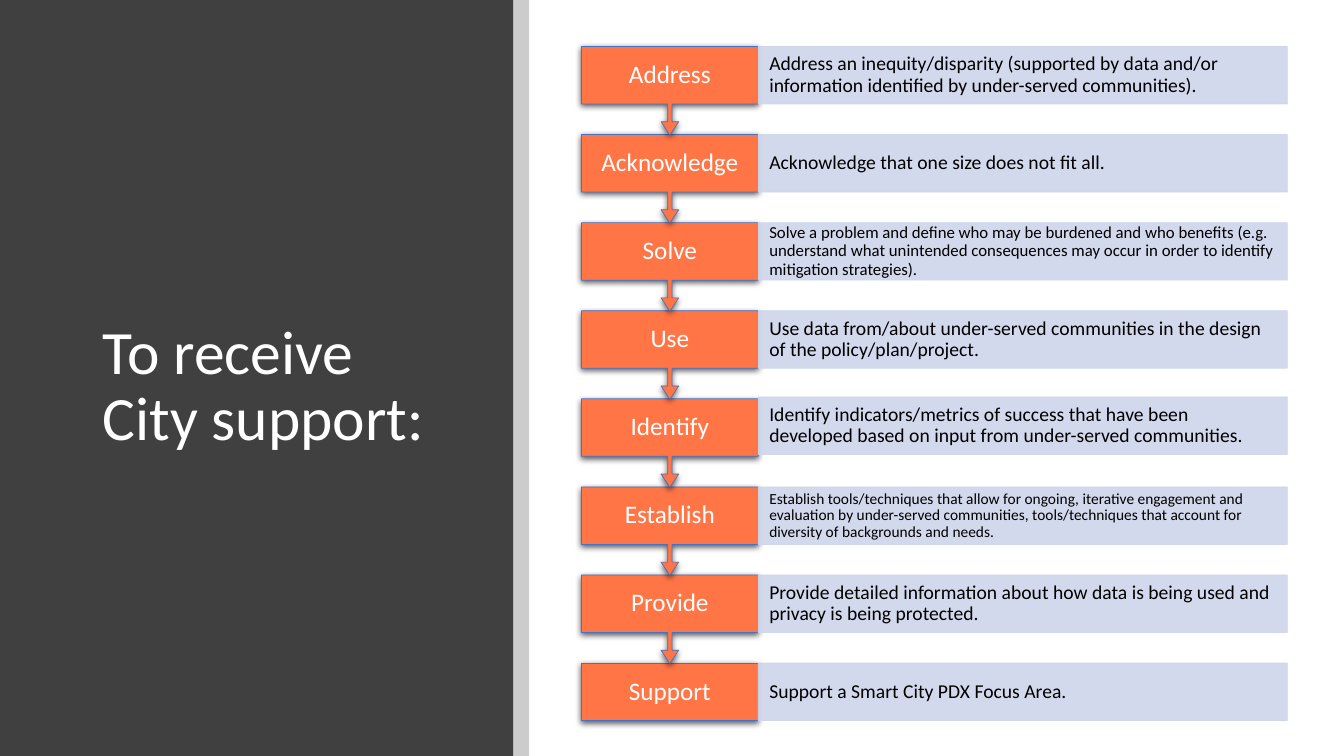
from lxml import etree
from pptx import Presentation, util as u
from pptx.dml.color import RGBColor
from pptx.enum import shapes, text
from pptx.oxml import ns

COLORS = {
    "panel": "404040",
    "strip": "000000",
    "step": "FF7546",
    "outline": "4472C4",
    "detail": "CFD5EA",
    "light": "FFFFFF",
    "dark": "000000",
}
BOX = shapes.MSO_SHAPE.RECTANGLE
ARROW_BOX = shapes.MSO_SHAPE.UP_ARROW_CALLOUT

STEP_LEFT, STEP_WIDTH = 415.4, 126.2
DETAIL_LEFT, DETAIL_WIDTH = STEP_LEFT + STEP_WIDTH, 378
FIRST_TOP, PITCH, ROW_HEIGHT, ARROW_HEIGHT = 33.2, 62.92, 41.1, 63.2

STEPS = [
    ("Address", "Address an inequity/disparity (supported by data and/or information identified by under-served communities).", 14, 0),
    ("Acknowledge", "Acknowledge that one size does not fit all.", 14, 0),
    ("Solve", "Solve a problem and define who may be burdened and who benefits (e.g. understand what unintended consequences may occur in order to identify mitigation strategies).", 12, 0),
    ("Use", "Use data from/about under-served communities in the design of the policy/plan/project.", 14, 0),
    ("Identify", "Identify indicators/metrics of success that have been developed based on input from under-served communities.", 14, -1.3),
    ("Establish", "Establish tools/techniques that allow for ongoing, iterative engagement and evaluation by under-served communities, tools/techniques that account for diversity of backgrounds and needs.", 11, 0),
    ("Provide", "Provide detailed information about how data is being used and privacy is being protected.", 14, 0),
    ("Support", "Support a Smart City PDX Focus Area.", 14, 0),
]


class Deck:
    def __init__(self):
        self.font = "Calibri"
        self.prs = Presentation()
        self.prs.slide_width, self.prs.slide_height = u.Pt(960), u.Pt(540)
        self.slide = self.prs.slides.add_slide(self.prs.slide_layouts[5])
        self.target = self.slide.shapes

    def start_group(self):
        self.target = self.slide.shapes.add_group_shape().shapes

    def shape(self, kind, place, fill, line=None, alpha=None):
        shape = self.target.add_shape(kind, *map(u.Pt, place))
        shape.shadow.inherit = False
        shape.fill.solid()
        shape.fill.fore_color.rgb = RGBColor.from_string(COLORS[fill])
        if line:
            shape.line.color.rgb = RGBColor.from_string(COLORS[line])
            shape.line.width = u.Pt(0.5)
        else:
            shape.line.fill.background()
        if alpha:
            for color in shape.element.spPr.iter(ns.qn("a:srgbClr")):
                etree.SubElement(color, ns.qn("a:alpha"), val=str(alpha * 1000))
        return shape

    def shadow(self, shape):
        effects = shape.element.spPr.find(ns.qn("a:effectLst"))
        outer = etree.SubElement(effects, ns.qn("a:outerShdw"), blurRad=str(u.Pt(4.5)),
                                 dist=str(u.Pt(1.5)), dir="5400000", algn="ctr", rotWithShape="0")
        color = etree.SubElement(outer, ns.qn("a:srgbClr"), val=COLORS["dark"])
        etree.SubElement(color, ns.qn("a:alpha"), val="63000")

    def caption(self, shape, words, size, color, align=text.PP_ALIGN.LEFT, side=7.9):
        frame = shape.text_frame
        frame.text = words
        paragraph = frame.paragraphs[0]
        font = paragraph.runs[0].font
        formats = [
            (frame, {"word_wrap": True, "auto_size": text.MSO_AUTO_SIZE.NONE,
                     "vertical_anchor": text.MSO_ANCHOR.MIDDLE,
                     "margin_left": u.Pt(side), "margin_right": u.Pt(side),
                     "margin_top": 0, "margin_bottom": 0}),
            (paragraph, {"alignment": align, "line_spacing": 0.9}),
            (font, {"name": self.font, "size": u.Pt(size)}),
        ]
        for part, values in formats:
            for name, value in values.items():
                setattr(part, name, value)
        font.color.rgb = RGBColor.from_string(COLORS[color])

    def title(self, words, place):
        heading = self.slide.shapes.title
        for name, value in zip(("left", "top", "width", "height"), place):
            setattr(heading, name, u.Pt(value))
        self.caption(heading, words, 44, "light", side=7.2)
        self.slide.shapes.element.append(heading.element)

    def step(self, words, top, last):
        kind, height = (BOX, ROW_HEIGHT) if last else (ARROW_BOX, ARROW_HEIGHT)
        step = self.shape(kind, (STEP_LEFT, top, STEP_WIDTH, height), "step", "outline")
        self.shadow(step)
        if not last:
            step.rotation = 180
            for index, value in enumerate((0.05, 0.1, 0.15, 0.65)):
                step.adjustments[index] = value
        label = self.target.add_textbox(*map(u.Pt, (STEP_LEFT, top, STEP_WIDTH, ROW_HEIGHT)))
        self.caption(label, words, 18, "light", text.PP_ALIGN.CENTER, 8.6)

    def detail(self, words, top, size):
        place = (DETAIL_LEFT, top, DETAIL_WIDTH, ROW_HEIGHT)
        self.caption(self.shape(BOX, place, "detail", "detail", 90), words, size, "dark")


def main():
    deck = Deck()
    deck.shape(BOX, (0, 0, 366.5, 540), "panel")
    deck.shape(BOX, (366.5, 0, 11.5, 540), "strip", alpha=20)
    deck.title("To receive City support:", (66, 64, 263, 425.5))
    deck.start_group()
    final = len(STEPS) - 1
    for row, (name, detail, size, shift) in reversed(list(enumerate(STEPS))):
        top = FIRST_TOP + row * PITCH
        deck.step(name, top, row == final)
        deck.detail(detail, top + shift, size)
    deck.prs.save("out.pptx")


if __name__ == "__main__":
    main()
